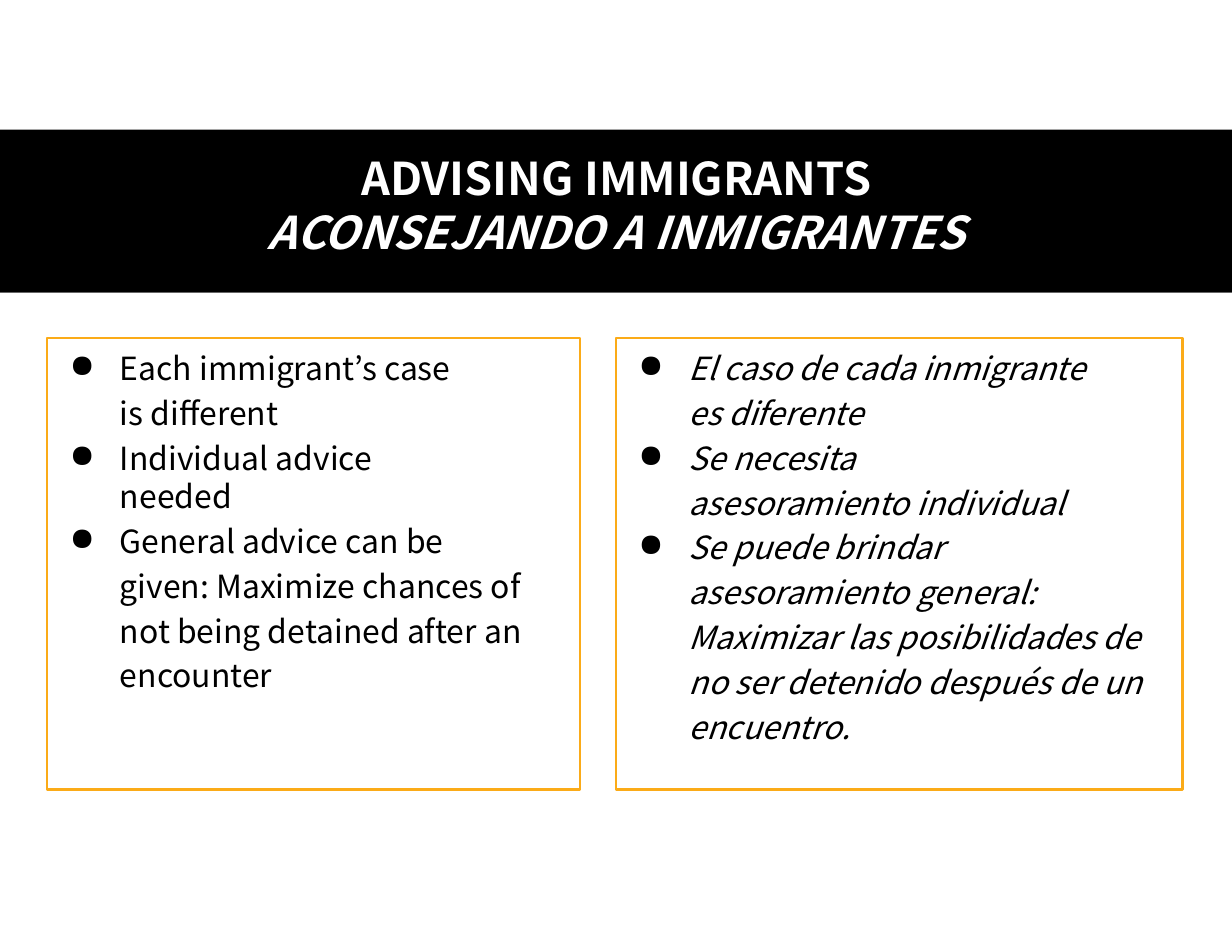
from lxml import etree
from pptx import Presentation
from pptx.dml.color import RGBColor
from pptx.enum.shapes import MSO_CONNECTOR, MSO_SHAPE
from pptx.enum.text import MSO_ANCHOR, MSO_AUTO_SIZE, PP_ALIGN
from pptx.oxml.ns import qn
from pptx.util import Cm, Pt


def color(hex_string):
    return RGBColor.from_string(hex_string)


def style(paragraph, size, hex_string, bold, italic, before):
    font = paragraph.font
    font.name = "Noto Sans CJK JP"
    font.size = Pt(size)
    font.color.rgb = color(hex_string)
    font.bold = bold
    font.italic = italic
    paragraph.space_before = Pt(before)


prs = Presentation()
prs.slide_width = Cm(27.94)
prs.slide_height = Cm(21.59)
slide = prs.slides.add_slide(prs.slide_layouts[5])

band = slide.shapes.add_shape(MSO_SHAPE.RECTANGLE, 0, Cm(2.94), prs.slide_width, Cm(3.7))
band.shadow.inherit = False
band.fill.solid()
band.fill.fore_color.rgb = color("000000")
band.line.fill.background()

band_edge = slide.shapes.add_connector(MSO_CONNECTOR.STRAIGHT, prs.slide_width, Cm(6.64), 0, Cm(6.64))
band_edge.line.color.rgb = color("666666")
band_edge.line.width = Pt(0.82)
etree.SubElement(band_edge._element.spPr, qn("a:effectLst"))

heading = slide.shapes.title
slide.shapes._spTree.append(heading._element)
heading.left, heading.top, heading.width, heading.height = Cm(1.5), Cm(3.15), Cm(24.97), Cm(2.74)
heading_text = heading.text_frame
heading_text.text = "ADVISING IMMIGRANTS\nACONSEJANDO A INMIGRANTES"
heading_text.margin_left = heading_text.margin_right = heading_text.margin_bottom = 0
heading_text.margin_top = Cm(0.25)
heading_text.vertical_anchor = MSO_ANCHOR.TOP
heading_text.auto_size = MSO_AUTO_SIZE.NONE
for paragraph, italic, before in zip(heading_text.paragraphs, (False, True), (1.4, 0.5)):
    paragraph.alignment = PP_ALIGN.CENTER
    style(paragraph, 29, "FFFFFF", True, italic, before)

# text, line spacing, space before, right margin in cm, bulleted
english = [
    ("Each immigrant’s case is different", 1.17, 2.8, 2.7, True),
    ("Individual advice needed", 1.0, 4.2, 3.5, True),
    ("General advice can be given: Maximize chances of not being detained after an encounter",
     1.17, 0, 1.15, True),
]
spanish = [
    ("El caso de cada inmigrante es diferente", 1.17, 2.8, 1.7, True),
    ("Se necesita asesoramiento individual", 1.17, 0, 2.4, True),
    ("Se puede brindar asesoramiento general:", 1.17, 0, 1.7, True),
    ("Maximizar las posibilidades de no ser detenido después de un encuentro.", 1.17, 0.1, 0.55, False),
]

for left, width, italic, advice in ((1.07, 12.09, False, english), (13.97, 12.85, True, spanish)):
    panel = slide.shapes.add_shape(MSO_SHAPE.RECTANGLE, Cm(left), Cm(7.67), Cm(width), Cm(10.24))
    panel.shadow.inherit = False
    panel.fill.background()
    panel.line.color.rgb = color("FBAB18")
    panel.line.width = Pt(1.65)
    panel_text = panel.text_frame
    panel_text.word_wrap = True
    panel_text.vertical_anchor = MSO_ANCHOR.TOP
    panel_text.margin_left = panel_text.margin_right = panel_text.margin_bottom = 0
    panel_text.margin_top = Cm(0.1)
    panel_text.text = "\n".join(item[0] for item in advice)
    for paragraph, (_, spacing, before, right, bulleted) in zip(panel_text.paragraphs, advice):
        paragraph.alignment = PP_ALIGN.LEFT
        paragraph.line_spacing = spacing
        style(paragraph, 20.5, "000000", False, italic, before)
        properties = paragraph._p.get_or_add_pPr()
        properties.set("marL", str(Cm(1.65)))
        properties.set("marR", str(Cm(right)))
        properties.set("indent", str(Cm(-1.14 if bulleted else 0)))
        if bulleted:
            bullet = etree.Element(qn("a:buChar"), char="●")
            properties.find(qn("a:defRPr")).addprevious(bullet)

prs.save("out.pptx")
